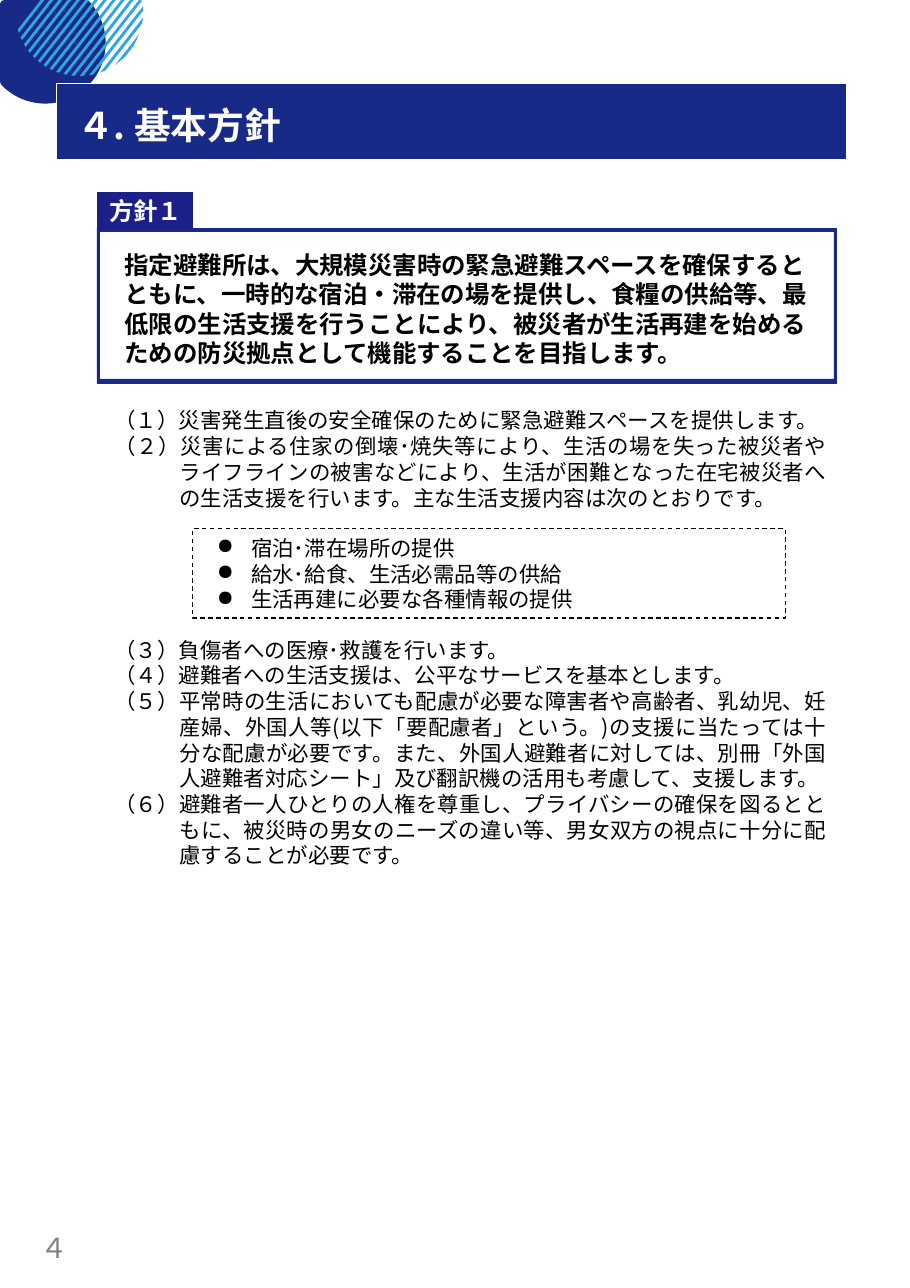
"""Builds the basic policy page of a shelter handbook."""
import math

from lxml import etree
from pptx import Presentation
from pptx import util as u
from pptx.dml.color import RGBColor
from pptx.enum import dml, shapes, text
from pptx.oxml.ns import qn

SANS = "Noto Sans CJK JP"
NAVY, LABEL_NAVY, SKY = "172A88", "1D2088", "2EA7E0"
WHITE, BLACK, GRAY = "FFFFFF", "000000", "808080"
PX = 9144
PAGE = (826, 1169)

HEADING = ["４. 基本方針"]
LABEL = ["方針１"]
POLICY = [
    "指定避難所は、大規模災害時の緊急避難スペースを確保するとともに、一時的な宿泊・滞在の場を提供し、"
    "食糧の供給等、最低限の生活支援を行うことにより、被災者が生活再建を始めるための防災拠点として"
    "機能することを目指します。",
]
FIRST_ITEMS = [
    "（１）災害発生直後の安全確保のために緊急避難スペースを提供します。",
    "（２）災害による住家の倒壊･焼失等により、生活の場を失った被災者やライフラインの被害などにより、"
    "生活が困難となった在宅被災者への生活支援を行います。主な生活支援内容は次のとおりです。",
]
SUPPORT = [
    "宿泊･滞在場所の提供",
    "給水･給食、生活必需品等の供給",
    "生活再建に必要な各種情報の提供",
]
LATER_ITEMS = [
    "（３）負傷者への医療･救護を行います。",
    "（４）避難者への生活支援は、公平なサービスを基本とします。",
    "（５）平常時の生活においても配慮が必要な障害者や高齢者、乳幼児、妊産婦、外国人等(以下「要配慮者」"
    "という。)の支援に当たっては十分な配慮が必要です。また、外国人避難者に対しては、別冊「外国人避難者"
    "対応シート」及び翻訳機の活用も考慮して、支援します。",
    "（６）避難者一人ひとりの人権を尊重し、プライバシーの確保を図るとともに、被災時の男女のニーズの"
    "違い等、男女双方の視点に十分に配慮することが必要です。",
]
PAGE_NUMBER = ["４"]

DISC = (41, 39, 55)
STRIPED_DISC = (72, 11, 58)
STRIPE_COUNT, STRIPE_START, STRIPE_STEP, STRIPE_WIDTH, STRIPE_LEAN = 15, 37, 8.1, 3.3, 0.78


def px(value):
    return u.Emu(round(value * PX))


def color(value):
    return RGBColor.from_string(value)


def box(left, top, right, bottom):
    return [(left, top), (right, top), (right, bottom), (left, bottom)]


def disc_outline(center_x, center_y, radius):
    angles = [math.radians(degree) for degree in range(0, 360, 4)]
    return [(max(0, center_x + radius * math.cos(angle)),
             max(0, center_y + radius * math.sin(angle))) for angle in angles]


def stripe_edge(start):
    center_x, center_y, radius = STRIPED_DISC
    offset = start - center_x
    square = 1 + STRIPE_LEAN ** 2
    middle = (STRIPE_LEAN * offset + center_y) / square
    reach = math.sqrt(middle ** 2 - (offset ** 2 + center_y ** 2 - radius ** 2) / square)
    heights = max(0, middle - reach), middle + reach
    return [(start - STRIPE_LEAN * y, y) for y in heights]


def stripe(index):
    start = STRIPE_START + index * STRIPE_STEP
    return stripe_edge(start) + stripe_edge(start + STRIPE_WIDTH)[::-1]


def add_outline(slide, contours, fill, line=None, line_width=0.75):
    scaled = [[(px(x), px(y)) for x, y in contour] for contour in contours]
    builder = slide.shapes.build_freeform(*scaled[0][0])
    for number, contour in enumerate(scaled):
        if number:
            builder.move_to(*contour[0])
        builder.add_line_segments(contour[1:], close=True)
    shape = builder.convert_to_shape()
    shape.shadow.inherit = False
    shape.fill.solid()
    shape.fill.fore_color.rgb = color(fill)
    if line:
        shape.line.color.rgb = color(line)
        shape.line.width = u.Pt(line_width)
    else:
        shape.line.fill.background()


def write(shape, lines, size, ink=BLACK, font=SANS, bold=False, align=text.PP_ALIGN.LEFT,
          insets=(10, 5), margin=0, indent=0, bullet=None, before=0):
    frame = shape.text_frame
    frame.word_wrap = True
    frame.margin_left = frame.margin_right = px(insets[0])
    frame.margin_top = frame.margin_bottom = px(insets[1])
    for number, line in enumerate(lines):
        paragraph = frame.add_paragraph() if number else frame.paragraphs[0]
        paragraph.text = line
        paragraph.alignment = align
        paragraph.line_spacing = u.Pt(round(size * 1.2, 1))
        paragraph.space_before = u.Pt(before)
        properties = paragraph._p.get_or_add_pPr()
        properties.set("marL", str(px(margin)))
        properties.set("indent", str(px(indent)))
        if bullet:
            etree.SubElement(properties, qn("a:buChar")).set("char", bullet)
        paragraph.font.size = u.Pt(size)
        paragraph.font.bold = bold
        paragraph.font.color.rgb = color(ink)
        paragraph.font.name = font
        etree.SubElement(properties.find(qn("a:defRPr")), qn("a:ea")).set("typeface", font)


def add_text(slide, place, lines, size, **style):
    write(slide.shapes.add_textbox(*map(px, place)), lines, size, **style)


def main():
    presentation = Presentation()
    presentation.slide_width, presentation.slide_height = map(px, PAGE)
    slide = presentation.slides.add_slide(presentation.slide_layouts[6])
    title = dict(ink=WHITE, bold=True, insets=(0, 1), margin=1, before=1)
    items = dict(align=text.PP_ALIGN.JUSTIFY, margin=59, indent=-59)

    add_outline(slide, [disc_outline(*DISC)], NAVY)
    add_outline(slide, [stripe(index) for index in range(STRIPE_COUNT)], SKY)

    add_text(slide, (113, 226, 639, 109), POLICY, 16, bold=True, insets=(0, 1), before=1)
    add_outline(slide, [box(88, 207, 759, 348), box(90, 210, 757, 344)], NAVY, NAVY, 0.5)
    add_text(slide, (15, 1112, 68, 40), PAGE_NUMBER, 18, ink=GRAY, font="Arial",
             align=text.PP_ALIGN.CENTER)

    add_text(slide, (94, 365, 666, 104), FIRST_ITEMS, 14, **items)
    support_box = slide.shapes.add_shape(shapes.MSO_SHAPE.RECTANGLE, *map(px, (175, 480, 538, 81)))
    support_box.shadow.inherit = False
    support_box.fill.background()
    support_box.line.color.rgb = color(BLACK)
    support_box.line.width = u.Pt(0.75)
    support_box.line.dash_style = dml.MSO_LINE.DASH
    support_box.text_frame.vertical_anchor = text.MSO_ANCHOR.MIDDLE
    write(support_box, SUPPORT, 14, align=text.PP_ALIGN.JUSTIFY, margin=43, indent=-31, bullet="●")
    add_text(slide, (94, 573, 666, 222), LATER_ITEMS, 14, **items)

    add_outline(slide, [box(88, 174, 175, 209)], LABEL_NAVY)
    add_text(slide, (98, 177, 230, 28), LABEL, 16, **title)
    add_outline(slide, [box(51, 76, 768, 145)], NAVY, WHITE)
    add_text(slide, (69, 92, 661, 42), HEADING, 24, **title)
    presentation.save("out.pptx")


if __name__ == "__main__":
    main()
